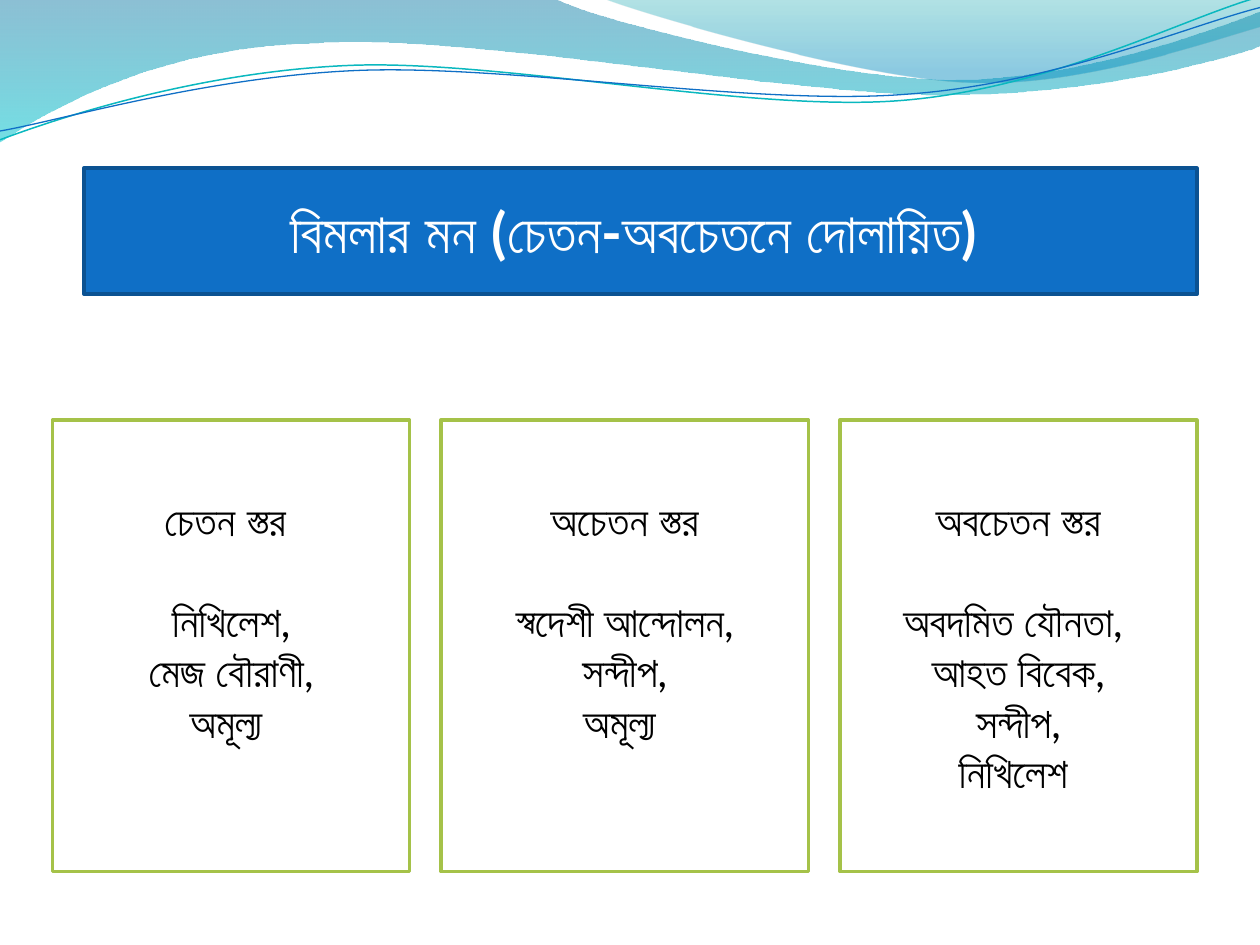
from lxml import etree
from pptx import Presentation
from pptx import util as u
from pptx.dml.color import RGBColor
from pptx.enum import shapes, text
from pptx.oxml.ns import qn

COLORS = {
    "white": "FFFFFF", "black": "000000",
    "blue": "0F6FC6", "navy": "0B5292", "green": "A5C249", "teal": "0AB8BF",
    "wave_blue": "0074A1", "wave_cyan": "00C6CF",
    "crest_teal": "00A1A9", "crest_blue": "008BBF",
}
FONT = "Lato"
UNIT = 2.54  # wave points are in inches, lengths in cm

# Each wave: a start point, then straight (2 numbers) or cubic (6 numbers) pieces
BIG_WAVE = [(0, 0), (4.4, -0.01),
            (4.76, 0.17, 6.64, 0.63, 7.58, 0.63), (8.53, 0.63, 9.58, 0.26, 10, 0.09),
            (10.01, 0.36), (9.83, 0.44, 8.7, 0.76, 7.46, 0.75),
            (6.22, 0.75, 3.82, 0.28, 2.57, 0.34), (1.29, 0.36, 0.46, 0.83, -0.01, 1.13),
            (0, 0)]
CREST = [(4.79, -0.01), (5.09, 0.11, 6.82, 0.62, 7.69, 0.65),
         (8.56, 0.69, 9.61, 0.32, 10, 0.21), (10, 0), (4.79, -0.01)]
TEAL_LINE = [(0, 1.11), (0.48, 0.93, 1.58, 0.57, 2.77, 0.52),
             (3.95, 0.47, 5.93, 0.89, 7.13, 0.8), (8.33, 0.71, 9.38, 0.15, 9.98, -0.02)]
BLUE_LINE = [(0, 1.04), (0.47, 0.96, 1.64, 0.61, 2.83, 0.56),
             (4.03, 0.51, 5.97, 0.84, 7.17, 0.75), (8.36, 0.67, 9.41, 0.21, 10, 0.06)]

CARDS = [
    (7.2, "চেতন স্তর ", ["নিখিলেশ,", "মেজ বৌরাণী,", "অমূল্য "]),
    (7.41, "অচেতন স্তর", ["স্বদেশী আন্দোলন,", "সন্দীপ,", "অমূল্য "]),
    (7.2, "অবচেতন স্তর", ["অবদমিত যৌনতা, ", "আহত বিবেক,", "সন্দীপ,", "নিখিলেশ "]),
]


def rgb(name):
    return RGBColor.from_string(COLORS[name])


class SlideBuilder:
    def __init__(self, slide):
        self.slide = slide

    def outline(self, pieces, close):
        points = [(u.Cm(x * UNIT), u.Cm(y * UNIT))
                  for piece in pieces for x, y in zip(piece[::2], piece[1::2])]
        builder = self.slide.shapes.build_freeform(*points[0])
        builder.add_line_segments(points[1:], close=close)
        sp = builder.convert_to_shape()
        sp.shadow.inherit = False
        # Merge the three steps of each cubic piece into one Bezier segment
        steps = iter(list(sp._element.iter(qn("a:lnTo"))))
        for piece in pieces[1:]:
            step = next(steps)
            if len(piece) == 6:
                step.tag = qn("a:cubicBezTo")
                for extra in (next(steps), next(steps)):
                    step.append(extra[0])
                    extra.getparent().remove(extra)
        return sp

    def wave(self, pieces, stops):
        sp = self.outline(pieces, True)
        sp.line.fill.background()
        sp.fill.gradient()
        sp.fill.gradient_angle = 270
        for stop, (position, color, _) in zip(sp.fill.gradient_stops, stops):
            stop.position = position
            stop.color.rgb = rgb(color)
        for el, (_, _, opacity) in zip(sp._element.iter(qn("a:srgbClr")), stops):
            etree.SubElement(el, qn("a:alpha")).set("val", str(opacity * 1000))

    def curve(self, pieces, color, width):
        sp = self.outline(pieces, False)
        sp.fill.background()
        self.border(sp, color, width)

    def border(self, sp, color, width=2):
        sp.line.color.rgb = rgb(color)
        sp.line.width = u.Pt(width)

    def paragraph(self, p, size, color, bold):
        p.alignment = text.PP_ALIGN.CENTER
        for r in p.runs:
            r.font.name, r.font.size, r.font.bold = FONT, u.Pt(size), bold
            r.font.color.rgb = rgb(color)

    def title(self, words, left, top, width, height):
        sp = self.slide.shapes.title
        sp.left, sp.top, sp.width, sp.height = map(u.Cm, (left, top, width, height))
        sp.fill.solid()
        sp.fill.fore_color.rgb = rgb("blue")
        self.border(sp, "navy")
        tf = sp.text_frame
        tf.text = words
        tf.auto_size = text.MSO_AUTO_SIZE.NONE
        tf.vertical_anchor = text.MSO_ANCHOR.MIDDLE
        self.paragraph(tf.paragraphs[0], 32, "white", True)

    def card(self, heading, items, left, top, width, height):
        sp = self.slide.shapes.add_shape(shapes.MSO_SHAPE.RECTANGLE,
                                         *map(u.Cm, (left, top, width, height)))
        sp.shadow.inherit = False
        sp.fill.solid()
        sp.fill.fore_color.rgb = rgb("white")
        self.border(sp, "green")
        tf = sp.text_frame
        tf.word_wrap = True
        tf.vertical_anchor = text.MSO_ANCHOR.TOP
        tf.margin_top = u.Cm(1.5)
        tf.text = "\n".join([heading] + items)
        for i, p in enumerate(tf.paragraphs):
            self.paragraph(p, 24, "black", i == 0)
        tf.paragraphs[1].space_before = u.Pt(28.8)


def main():
    prs = Presentation()
    prs.slide_width, prs.slide_height = u.Cm(25.4), u.Cm(19.05)
    s = SlideBuilder(prs.slides.add_slide(prs.slide_layouts[5]))

    # Wave decoration
    s.wave(BIG_WAVE, [(0, "wave_blue", 45), (1, "wave_cyan", 55)])
    s.wave(CREST, [(0, "crest_teal", 30), (0.8, "crest_blue", 45)])
    s.curve(TEAL_LINE, "teal", 0.85)
    s.curve(BLUE_LINE, "blue", 0.75)

    # Title banner
    s.title("বিমলার মন (চেতন-অবচেতনে দোলায়িত) ", 1.69, 3.39, 22.44, 2.54)

    # Three levels of mind, left to right with equal gaps
    left, gap = 1.06, 0.63
    for width, heading, items in CARDS:
        s.card(heading, items, left, 8.47, width, 9.1)
        left += width + gap

    prs.save("out.pptx")


if __name__ == "__main__":
    main()
